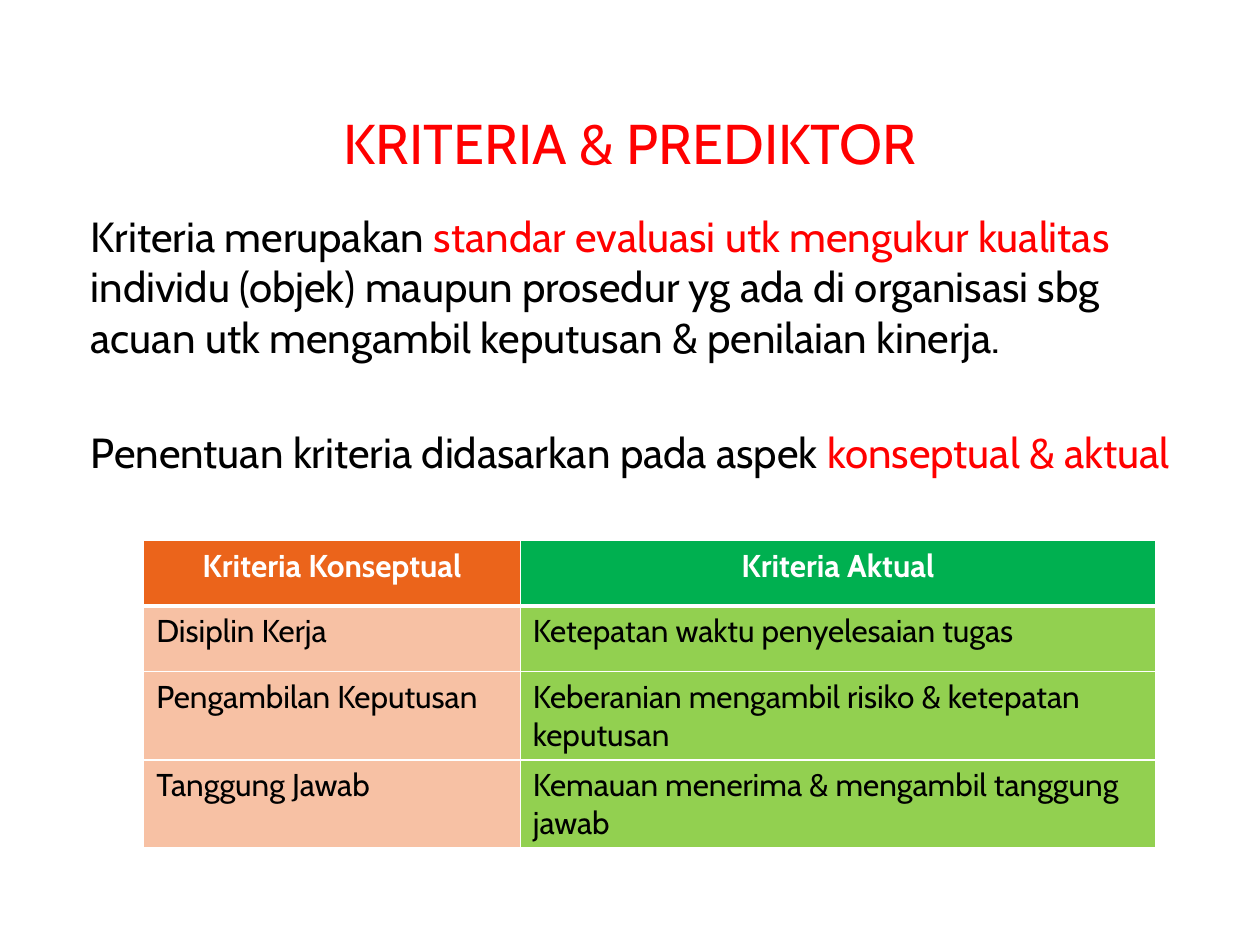
import pptx
import pptx.dml.color
import pptx.enum.text
import pptx.oxml
import pptx.oxml.ns
import pptx.util

RED = pptx.dml.color.RGBColor(0xFF, 0x00, 0x00)
BLACK = pptx.dml.color.RGBColor(0x00, 0x00, 0x00)
WHITE = pptx.dml.color.RGBColor(0xFF, 0xFF, 0xFF)
ORANGE = pptx.dml.color.RGBColor(0xEB, 0x64, 0x1B)
PEACH = pptx.dml.color.RGBColor(0xF7, 0xC1, 0xA4)
GREEN = pptx.dml.color.RGBColor(0x00, 0xB0, 0x50)
LIME = pptx.dml.color.RGBColor(0x92, 0xD0, 0x50)

ALIGN = pptx.enum.text.PP_ALIGN
ANCHOR = pptx.enum.text.MSO_ANCHOR

ROWS = [
    ("Kriteria Konseptual", "Kriteria Aktual"),
    ("Disiplin Kerja", "Ketepatan waktu penyelesaian tugas"),
    ("Pengambilan Keputusan", "Keberanian mengambil risiko & ketepatan keputusan"),
    ("Tanggung Jawab", "Kemauan menerima & mengambil tanggung jawab"),
]
BODY = [
    [
        ("Kriteria merupakan ", BLACK),
        ("standar evaluasi utk mengukur kualitas", RED),
        (" individu (objek) maupun prosedur yg ada di organisasi sbg acuan utk "
         "mengambil keputusan & penilaian kinerja.", BLACK),
    ],
    [
        ("Penentuan kriteria didasarkan pada aspek ", BLACK),
        ("konseptual & aktual", RED),
    ],
]


class Deck:
    """Hold the style and the current slide, placing parts by shares of its size."""

    def __init__(self, wide, high, font):
        self.show = pptx.Presentation()
        self.show.slide_width = self.wide = pptx.util.Inches(wide)
        self.show.slide_height = self.high = pptx.util.Inches(high)
        self.font = font
        self.slide = self.show.slides.add_slide(self.show.slide_layouts[5])

    def box(self, left, top, width, height):
        sides = (self.wide, self.high) * 2
        return [int(share * side) for share, side in zip((left, top, width, height), sides)]

    def set(self, item, form):
        for name, value in form.items():
            setattr(item, name, value)

    def run(self, para, text, size, color, bold=False):
        run = para.add_run()
        run.text = text
        self.set(run.font, {"name": self.font, "size": pptx.util.Pt(size), "bold": bold})
        run.font.color.rgb = color

    def title(self, text, area, size, color):
        shape = self.slide.shapes.title
        self.set(shape, dict(zip(("left", "top", "width", "height"), self.box(*area))))
        self.set(shape.text_frame, {"word_wrap": True, "vertical_anchor": ANCHOR.MIDDLE})
        para = shape.text_frame.paragraphs[0]
        para.alignment = ALIGN.CENTER
        self.run(para, text, size, color)

    def text(self, paras, area, size, gap, inset):
        frame = self.slide.shapes.add_textbox(*self.box(*area)).text_frame
        self.set(frame, {"word_wrap": True, "margin_left": pptx.util.Inches(inset)})
        for index, runs in enumerate(paras):
            para = frame.add_paragraph() if index else frame.paragraphs[0]
            para.space_before = pptx.util.Pt(gap if index else 0)
            for words, color in runs:
                self.run(para, words, size, color)

    def edge(self, cell, sides):
        props = cell._tc.get_or_add_tcPr()
        for side, width in sides.items():
            props.append(pptx.oxml.parse_xml(
                f'<a:ln{side} {pptx.oxml.ns.nsdecls("a")} w="{pptx.util.Pt(width)}">'
                f'<a:solidFill><a:srgbClr val="{WHITE}"/></a:solidFill></a:ln{side}>'))

    def table(self, rows, area, cols, highs, size, heads, fills):
        frame = self.slide.shapes.add_table(len(rows), len(cols), *self.box(*area))
        table = frame.table
        for col, share in zip(table.columns, cols):
            col.width = int(share * self.wide)
        for row, share in zip(table.rows, highs):
            row.height = int(share * self.high)
        for down, row in enumerate(rows):
            head = down == 0
            for across, words in enumerate(row):
                cell = table.cell(down, across)
                self.edge(cell, {"L": 1, "R": 1, "T": 3 if down == 1 else 1, "B": 3 if head else 1})
                cell.fill.solid()
                cell.fill.fore_color.rgb = (heads if head else fills)[across]
                para = cell.text_frame.paragraphs[0]
                para.alignment = ALIGN.CENTER if head else ALIGN.LEFT
                self.run(para, words, size, WHITE if head else BLACK, head)


def main():
    deck = Deck(10, 7.5, "Cabin")
    deck.title("KRITERIA & PREDIKTOR", (0.05, 0.7 / 7.5, 0.9, 0.86 / 7.5), 32, RED)
    deck.text(BODY, (0.05, 1.62 / 7.5, 0.9, 0.32), 24, 37, 0.22)
    highs = [share / 7.5 for share in (0.52, 0.52, 0.54, 0.54)]
    deck.table(ROWS, (0.114, 4.29 / 7.5, 0.803, sum(highs)), (0.299, 0.504), highs,
               18, (ORANGE, GREEN), (PEACH, LIME))
    deck.show.save("out.pptx")


if __name__ == "__main__":
    main()
